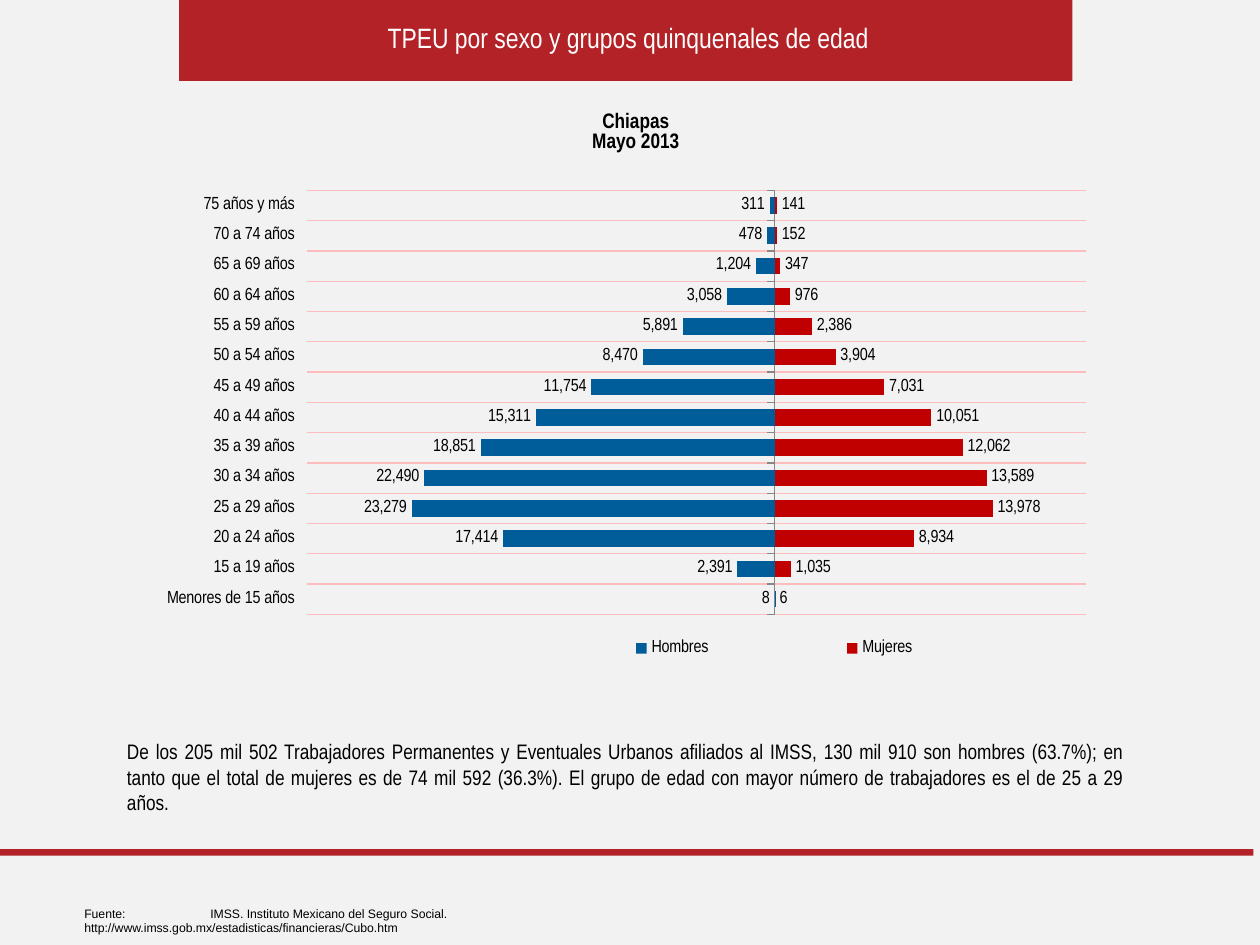
"""Build the age and sex pyramid slide for Chiapas."""
import pptx
import pptx.chart.data
import pptx.dml.color
import pptx.enum.chart
import pptx.enum.shapes
import pptx.enum.text
import pptx.oxml
import pptx.oxml.ns
import pptx.util

Cm = pptx.util.Cm
Pt = pptx.util.Pt
RGBColor = pptx.dml.color.RGBColor
qn = pptx.oxml.ns.qn
Align = pptx.enum.text.PP_ALIGN

RED = RGBColor(0xB2, 0x22, 0x27)
PAPER = RGBColor(0xF2, 0xF2, 0xF2)
BLACK = RGBColor(0, 0, 0)
WHITE = RGBColor(0xFF, 0xFF, 0xFF)
PINK = RGBColor(0xFF, 0xBC, 0xBC)
GREY = RGBColor(0x86, 0x86, 0x86)
WOMEN = RGBColor(0xC0, 0, 0)
MEN = RGBColor(0, 0x5D, 0x99)
NARROW = "Arial Narrow"

TITLE = "TPEU por sexo y grupos quinquenales de edad"
CHART_TITLE = ["Chiapas", "Mayo 2013"]
SUMMARY = (
    "De los 205 mil 502 Trabajadores Permanentes y Eventuales Urbanos afiliados al IMSS, "
    "130 mil 910 son hombres (63.7%); en tanto que el total de mujeres es de 74 mil 592 "
    "(36.3%). El grupo de edad con mayor número de trabajadores es el de 25 a 29 años."
)
SOURCE = (
    "Fuente:\tIMSS. Instituto Mexicano del Seguro Social. "
    "http://www.imss.gob.mx/estadisticas/financieras/Cubo.htm"
)
AGES = (
    ["Menores de 15 años"]
    + [f"{start} a {start + 4} años" for start in range(15, 75, 5)]
    + ["75 años y más"]
)
SERIES = [
    ("Mujeres", WOMEN, "#,##0",
     [6, 1035, 8934, 13978, 13589, 12062, 10051, 7031, 3904, 2386, 976, 347, 152, 141]),
    ("Hombres", MEN, "#,##0;[Black]#,##0",
     [-8, -2391, -17414, -23279, -22490, -18851, -15311, -11754, -8470, -5891, -3058,
      -1204, -478, -311]),
]
BANDS = [(3.61, 0, 18.01, 1.63), (0, 17.12, 25.27, 0.13)]


def lengths(values):
    return [Cm(value) for value in values]


def style(font, size, color=BLACK, name=NARROW, bold=False):
    font.name, font.size, font.bold = name, Pt(size), bold
    font.color.rgb = color


def write(box, text, size, align, color=BLACK, name=NARROW, tab=None):
    frame = box.text_frame
    frame.word_wrap = True
    frame.auto_size = pptx.enum.text.MSO_AUTO_SIZE.NONE
    para = frame.paragraphs[0]
    para.alignment = align
    if tab:
        stops = pptx.oxml.parse_xml(
            f'<a:tabLst {pptx.oxml.ns.nsdecls("a")}><a:tab pos="{tab}" algn="l"/></a:tabLst>')
        para._p.get_or_add_pPr().append(stops)
    span = para.add_run()
    span.text = text
    style(span.font, size, color, name)
    return frame


def place(element, index, inner=False, **parts):
    for old in element.findall(qn("c:layout")):
        element.remove(old)
    target = '<c:layoutTarget val="inner"/>' if inner else ""
    modes = "".join(f'<c:{axis}Mode val="edge"/>' for axis in "xy")
    values = "".join(f'<c:{key} val="{value}"/>' for key, value in parts.items())
    element.insert(index, pptx.oxml.parse_xml(
        f'<c:layout {pptx.oxml.ns.nsdecls("c")}><c:manualLayout>{target}{modes}{values}'
        '</c:manualLayout></c:layout>'))


def add_pyramid(page):
    enums = pptx.enum.chart
    data = pptx.chart.data.CategoryChartData(number_format="#,##0")
    data.categories = AGES
    for name, _, _, values in SERIES:
        data.add_series(name, values)
    chart = page.shapes.add_chart(
        enums.XL_CHART_TYPE.BAR_CLUSTERED, *lengths((1.8, 2.03, 21.41, 11.81)), data).chart
    style(chart.font, 10)

    heading = chart.chart_title.text_frame
    for number, text in enumerate(CHART_TITLE):
        para = heading.add_paragraph() if number else heading.paragraphs[0]
        span = para.add_run()
        span.text = text
        style(span.font, 12, bold=True)
    place(chart.chart_title._element, 1, x=0.47, y=0.01)

    chart.has_legend = True
    chart.legend.position = enums.XL_LEGEND_POSITION.BOTTOM
    chart.legend.include_in_layout = False
    place(chart.legend._element, 1, x=0.39, y=0.91, w=0.51, h=0.05)

    rows = chart.category_axis
    rows.tick_label_position = enums.XL_TICK_LABEL_POSITION.LOW
    rows.major_tick_mark = enums.XL_TICK_MARK.OUTSIDE
    rows.format.line.color.rgb = GREY
    rows.has_major_gridlines = True
    rows.major_gridlines.format.line.color.rgb = PINK
    rows.major_gridlines.format.line.width = Pt(0.75)

    counts = chart.value_axis
    counts.minimum_scale, counts.maximum_scale = -30000, 20000
    counts.has_major_gridlines = False
    counts.visible = False

    plot = chart.plots[0]
    plot.gap_width, plot.overlap = 83, 100
    plot.vary_by_categories = False
    for series, (_, color, number_format, _) in zip(plot.series, SERIES):
        series.invert_if_negative = False
        series.format.fill.solid()
        series.format.fill.fore_color.rgb = color
        labels = series.data_labels
        labels.show_value = True
        labels.number_format = number_format
        labels.number_format_is_linked = False
        labels.position = enums.XL_LABEL_POSITION.OUTSIDE_END
        style(labels.font, 10)
    area = chart._chartSpace.find(qn("c:chart")).find(qn("c:plotArea"))
    place(area, 0, inner=True, x=0.205, y=0.153, w=0.734, h=0.724)


def main():
    deck = pptx.Presentation()
    deck.slide_width, deck.slide_height = Cm(25.4), Cm(19.05)
    page = deck.slides.add_slide(deck.slide_layouts[5])
    page.background.fill.solid()
    page.background.fill.fore_color.rgb = PAPER

    title = page.shapes.title
    for position in BANDS:
        band = page.shapes.add_shape(
            pptx.enum.shapes.MSO_SHAPE.RECTANGLE, *lengths(position))
        band.shadow.inherit = False
        band.fill.solid()
        band.fill.fore_color.rgb = RED
        band.line.fill.background()
        title._element.addprevious(band._element)

    title.left, title.top, title.width, title.height = lengths((3.71, 0.28, 17.91, 0.94))
    write(title, TITLE, 16, Align.CENTER, WHITE)
    add_pyramid(page)

    summary = page.shapes.add_textbox(*lengths((2.31, 14.48, 20.6, 2.36)))
    frame = write(summary, SUMMARY, 12, Align.JUSTIFY)
    frame.vertical_anchor = pptx.enum.text.MSO_ANCHOR.MIDDLE

    source = page.shapes.add_textbox(*lengths((1.45, 18.14, 12.9, 0.56)))
    write(source, SOURCE, 7, Align.LEFT, name="Arial", tab=Cm(2.54))
    deck.save("out.pptx")


if __name__ == "__main__":
    main()
